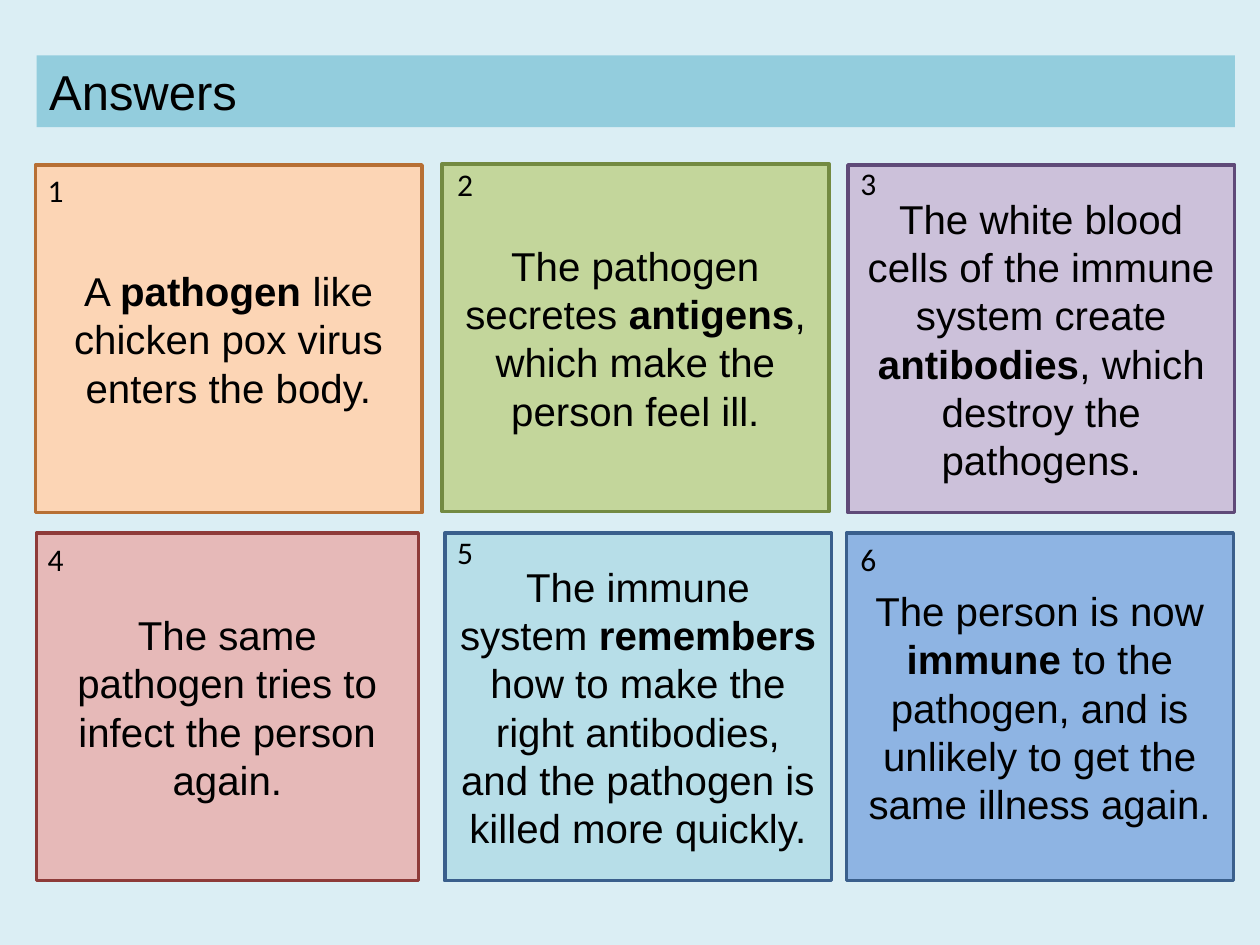
from dataclasses import dataclass

from pptx import Presentation
from pptx.dml.color import RGBColor
from pptx.enum.shapes import MSO_SHAPE
from pptx.enum.text import MSO_ANCHOR, MSO_AUTO_SIZE, PP_ALIGN
from pptx.util import Pt


@dataclass(frozen=True)
class Theme:
    """Colours, fonts and type sizes of the slide."""
    background: str = "DBEEF4"
    banner: str = "93CDDD"
    text: str = "000000"
    font: str = "Arial"
    number_font: str = "Calibri"
    title_size: int = 28
    card_size: int = 23
    number_size: int = 18
    orange: tuple = ("FCD5B5", "B76F34")
    green: tuple = ("C3D69B", "738A42")
    purple: tuple = ("CCC1DA", "5F4A78")
    red: tuple = ("E6B9B8", "8E3B39")
    aqua: tuple = ("B7DEE8", "3A5F8C")
    blue: tuple = ("8EB4E3", "3A5F8C")


THEME = Theme()
NUMBER_LEFTS = (20.2, 254.2, 484.6)
CARD_H = 198.7

# box (left, top, width), number top, colours, (before, key word, after)
CARDS = [
    ((20.2, 94.3, 221), 94.3, THEME.orange,
     ("A ", "pathogen", " like chicken pox virus enters the body.")),
    ((252.7, 93.6, 221), 90.7, THEME.green,
     ("The pathogen secretes ", "antigens", ", which make the person feel ill.")),
    ((484.6, 94.3, 221), 90, THEME.purple,
     ("The white blood cells of the immune system create ", "antibodies",
      ", which destroy the pathogens.")),
    ((20.9, 304.6, 218.2), 305.3, THEME.red,
     ("The same pathogen tries to infect the person again.",)),
    ((254.2, 304.6, 221), 301, THEME.aqua,
     ("The immune system ", "remembers",
      " how to make the right antibodies, and the pathogen is killed more quickly.")),
    ((483.8, 304.6, 221), 305.3, THEME.blue,
     ("The person is now ", "immune",
      " to the pathogen, and is unlikely to get the same illness again.")),
]


def paint(fill, colour):
    """Give a fill one solid colour."""
    fill.solid()
    fill.fore_color.rgb = RGBColor.from_string(colour)


def style(p, font, size, align=PP_ALIGN.LEFT):
    """Set the font and alignment of a paragraph."""
    p.alignment = align
    p.font.name = font
    p.font.size = Pt(size)
    p.font.color.rgb = RGBColor.from_string(THEME.text)


def add_banner(s, left, top, width, height):
    """Place the slide title as a coloured banner."""
    title = s.shapes.title
    title.left, title.top = Pt(left), Pt(top)
    title.width, title.height = Pt(width), Pt(height)
    paint(title.fill, THEME.banner)
    tf = title.text_frame
    tf.text = "Answers"
    tf.auto_size = MSO_AUTO_SIZE.NONE
    tf.vertical_anchor = MSO_ANCHOR.MIDDLE
    style(tf.paragraphs[0], THEME.font, THEME.title_size)


def add_card(s, left, top, width, height, colours, parts):
    """Draw one answer card with its key word in bold."""
    sp = s.shapes.add_shape(MSO_SHAPE.RECTANGLE, Pt(left), Pt(top), Pt(width), Pt(height))
    sp.shadow.inherit = False
    fill, line = colours
    paint(sp.fill, fill)
    paint(sp.line.fill, line)
    sp.line.width = Pt(2)
    tf = sp.text_frame
    tf.word_wrap = True
    tf.vertical_anchor = MSO_ANCHOR.MIDDLE
    p = tf.paragraphs[0]
    style(p, THEME.font, THEME.card_size, PP_ALIGN.CENTER)
    for i, part in enumerate(parts):
        r = p.add_run()
        r.text = part
        if i == 1:
            r.font.bold = True


def add_number(s, left, top, number):
    """Place a card number."""
    tf = s.shapes.add_textbox(Pt(left), Pt(top), Pt(23.8), Pt(29)).text_frame
    tf.word_wrap = False
    tf.auto_size = MSO_AUTO_SIZE.SHAPE_TO_FIT_TEXT
    tf.text = str(number)
    style(tf.paragraphs[0], THEME.number_font, THEME.number_size)


def main():
    """Build and save the slide."""
    prs = Presentation()
    prs.slide_width, prs.slide_height = Pt(720), Pt(540)
    s = prs.slides.add_slide(prs.slide_layouts[5])
    paint(s.background.fill, THEME.background)
    add_banner(s, 20.9, 31.7, 684.7, 41)
    for i, (box, number_top, colours, parts) in enumerate(CARDS):
        add_card(s, *box, CARD_H, colours, parts)
        add_number(s, NUMBER_LEFTS[i % 3], number_top, i + 1)
    prs.save("out.pptx")


if __name__ == "__main__":
    main()
